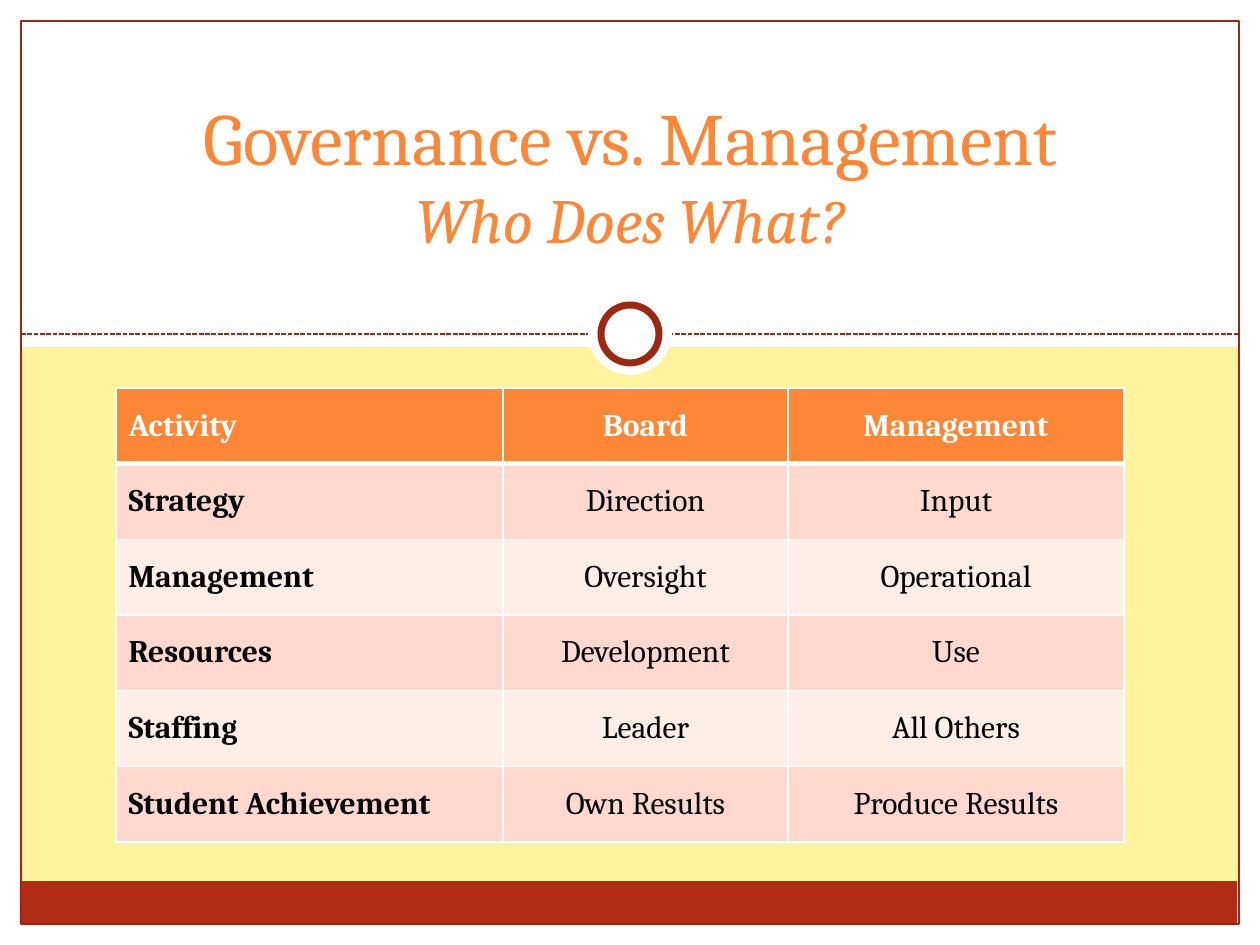
from lxml import etree
from pptx import Presentation, util as u
from pptx.dml.color import RGBColor
from pptx.enum import dml, shapes, text
from pptx.oxml import ns

EMU_PER_PX = 914400 / 126
WIDTH, HEIGHT, MARGIN = 1260, 945, 21
WHITE, BLACK, CREAM = "FFFFFF", "000000", "FFF39D"
ORANGE, RED, DARK_RED = "FE8637", "B32C16", "9E2713"
BANDS = "FFD9CE", "FFEDE8"


def px(length):
    return u.Emu(round(length * EMU_PER_PX))


def color(value):
    return RGBColor.from_string(value)


class SlideBuilder:
    font = "Cambria"

    def __init__(self, slide):
        self.slide = slide

    def background(self, fill):
        paint = self.slide.background.fill
        paint.solid()
        paint.fore_color.rgb = color(fill)

    def shape(self, kind, box, fill=None, line=None, weight=0.75):
        item = self.slide.shapes.add_shape(kind, *map(px, box))
        item.shadow.inherit = False
        if fill:
            item.fill.solid()
            item.fill.fore_color.rgb = color(fill)
        else:
            item.fill.background()
        if line:
            item.line.color.rgb = color(line)
            item.line.width = u.Pt(weight)
        else:
            item.line.fill.background()

    def dashed_rule(self, left, right, y, stroke):
        rule = self.slide.shapes.add_connector(
            shapes.MSO_CONNECTOR.STRAIGHT, px(left), px(y), px(right), px(y))
        rule.line.color.rgb = color(stroke)
        rule.line.width = u.Pt(0.9)
        rule.line.dash_style = dml.MSO_LINE.SQUARE_DOT
        etree.SubElement(rule._element.spPr, ns.qn("a:effectLst"))

    def title(self, box, heading, question):
        frame = self.slide.shapes.add_textbox(*map(px, box)).text_frame
        frame.word_wrap = True
        frame.vertical_anchor = text.MSO_ANCHOR.MIDDLE
        paragraph = frame.paragraphs[0]
        paragraph.alignment = text.PP_ALIGN.CENTER
        paragraph.font.name = self.font
        paragraph.font.color.rgb = color(ORANGE)
        first = paragraph.add_run()
        first.text = heading
        first.font.size = u.Pt(42)
        paragraph.add_line_break()
        second = paragraph.add_run()
        second.text = question
        second.font.size = u.Pt(36)
        second.font.italic = True

    def table(self, box, widths, rows):
        grid = self.slide.shapes.add_table(
            len(rows), len(widths), *map(px, box)).table
        for column, width in zip(grid.columns, widths):
            column.width = px(width)
        for r, row in enumerate(rows):
            for c, words in enumerate(row):
                self.cell(grid.cell(r, c), words, r, c)

    def cell(self, cell, words, r, c):
        header = r == 0
        cell.text = words
        cell.vertical_anchor = text.MSO_ANCHOR.MIDDLE
        paragraph = cell.text_frame.paragraphs[0]
        paragraph.alignment = text.PP_ALIGN.CENTER if c else text.PP_ALIGN.LEFT
        paragraph.font.name = self.font
        paragraph.font.size = u.Pt(18)
        paragraph.font.bold = header or c == 0
        paragraph.font.color.rgb = color(WHITE if header else BLACK)
        self.borders(cell, top=3 if r == 1 else 1, bottom=3 if header else 1)
        cell.fill.solid()
        cell.fill.fore_color.rgb = color(ORANGE if header else BANDS[(r - 1) % 2])

    def borders(self, cell, top, bottom):
        properties = cell._tc.get_or_add_tcPr()
        for side, weight in (("L", 1), ("R", 1), ("T", top), ("B", bottom)):
            edge = etree.SubElement(
                properties, ns.qn(f"a:ln{side}"), w=str(u.Pt(weight)))
            paint = etree.SubElement(edge, ns.qn("a:solidFill"))
            etree.SubElement(paint, ns.qn("a:srgbClr"), val=WHITE)


def main():
    deck = Presentation()
    deck.slide_width, deck.slide_height = px(WIDTH), px(HEIGHT)
    page = SlideBuilder(deck.slides.add_slide(deck.slide_layouts[6]))
    rect, oval = shapes.MSO_SHAPE.RECTANGLE, shapes.MSO_SHAPE.OVAL
    right, bottom = WIDTH - MARGIN, HEIGHT - MARGIN

    page.background(CREAM)
    for panel in ((0, bottom, WIDTH, MARGIN), (right, 0, MARGIN, HEIGHT),
                  (0, 0, MARGIN, HEIGHT), (0, 0, WIDTH, 347)):
        page.shape(rect, panel, WHITE)
    page.shape(rect, (20, 881, 1217, 43), RED)
    page.dashed_rule(MARGIN, right, 334, DARK_RED)
    page.shape(rect, (MARGIN, MARGIN, right - MARGIN, bottom - MARGIN),
               line=DARK_RED)
    page.shape(oval, (588, 291, 84, 84), WHITE)
    page.shape(oval, (601, 305, 58, 58), WHITE, DARK_RED, 4)
    page.title((95, 53, 1071, 242), "Governance vs. Management", "Who Does What?")
    page.table((116, 388, 1008, 454), (387, 285, 336), (
        ("Activity", "Board", "Management"),
        ("Strategy", "Direction", "Input"),
        ("Management", "Oversight", "Operational"),
        ("Resources", "Development", "Use"),
        ("Staffing", "Leader", "All Others"),
        ("Student Achievement", "Own Results", "Produce Results"),
    ))
    deck.save("out.pptx")


if __name__ == "__main__":
    main()
